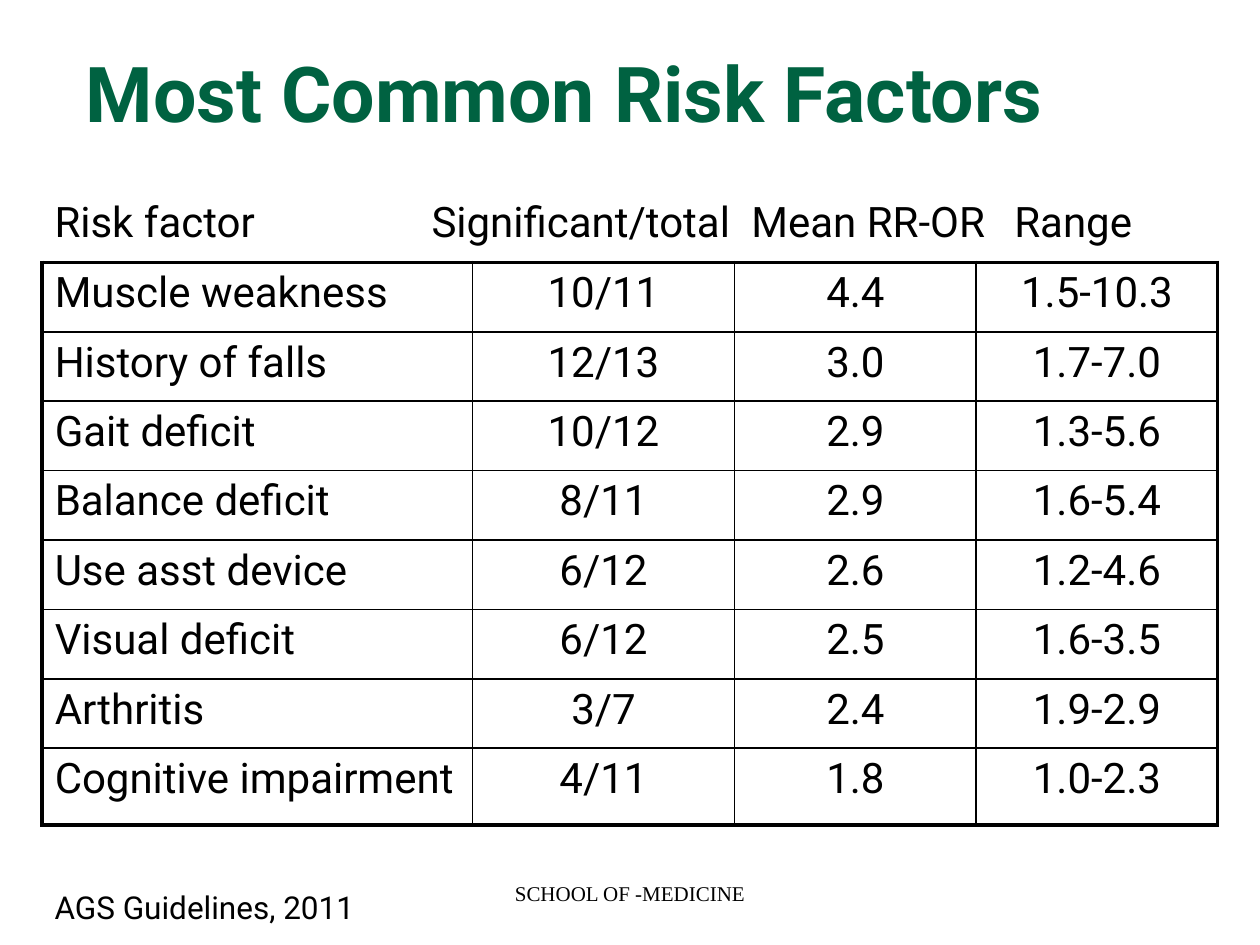
from dataclasses import dataclass

from lxml import etree
from pptx import Presentation
from pptx.dml.color import RGBColor
from pptx.enum.text import MSO_ANCHOR, PP_ALIGN
from pptx.oxml.ns import qn
from pptx.util import Cm, Pt

LEFT, CENTER = PP_ALIGN.LEFT, PP_ALIGN.CENTER
TOP, MIDDLE = MSO_ANCHOR.TOP, MSO_ANCHOR.MIDDLE


@dataclass(frozen=True)
class Theme:
    """Fonts, colours, type sizes and line widths of the slide."""
    sans: str = "Roboto"
    serif: str = "Times New Roman"
    green: str = "006241"
    black: str = "000000"
    title: int = 44
    body: int = 24
    source: int = 18
    footer: int = 12
    outer_line: float = 2.25
    inner_line: float = 1


THEME = Theme()
HEADINGS = ("Risk factor", "Significant/total", "Mean RR-OR", "Range")
HEADING_TABS = (7.6, 14.05, 19.35)
RISK_FACTORS = (
    ("Muscle weakness", "10/11", "4.4", "1.5-10.3"),
    ("History of falls", "12/13", "3.0", "1.7-7.0"),
    ("Gait deficit", "10/12", "2.9", "1.3-5.6"),
    ("Balance deficit", "8/11", "2.9", "1.6-5.4"),
    ("Use asst device", "6/12", "2.6", "1.2-4.6"),
    ("Visual deficit", "6/12", "2.5", "1.6-3.5"),
    ("Arthritis", "3/7", "2.4", "1.9-2.9"),
    ("Cognitive impairment", "4/11", "1.8", "1.0-2.3"),
)
COLUMN_SHARES = (0.366, 0.223, 0.2055, 0.2055)
ROW_HEIGHT = 1.4


def add_run(paragraph, text, size, font=THEME.sans, color=THEME.black, bold=False):
    """Append one formatted run to a paragraph."""
    run = paragraph.add_run()
    run.text = text
    run.font.name = font
    run.font.size = Pt(size)
    run.font.bold = bold
    run.font.color.rgb = RGBColor.from_string(color)


def add_text(slide, box, anchor=TOP, alignment=LEFT):
    """Add a wrapping text box and return its first paragraph."""
    frame = slide.shapes.add_textbox(*map(Cm, box)).text_frame
    frame.word_wrap = True
    frame.vertical_anchor = anchor
    paragraph = frame.paragraphs[0]
    paragraph.alignment = alignment
    return paragraph


def add_title(slide, box):
    """Place the slide title."""
    paragraph = add_text(slide, box, MIDDLE)
    paragraph.line_spacing = 0.9
    add_run(paragraph, "Most Common Risk Factors", THEME.title,
            color=THEME.green, bold=True)


def add_headings(slide, box):
    """Place the column headings on tab stops above the table."""
    paragraph = add_text(slide, box)
    properties = paragraph._p.get_or_add_pPr()
    tabs = etree.SubElement(properties, qn("a:tabLst"))
    for position in HEADING_TABS:
        etree.SubElement(tabs, qn("a:tab"), pos=str(Cm(position)), algn="l")
    add_run(paragraph, "\t".join(HEADINGS), THEME.body)


def set_borders(cell, outer_sides):
    """Draw the four cell borders, thicker on the outer sides."""
    properties = cell._tc.get_or_add_tcPr()
    for side in "LRTB":
        width = THEME.outer_line if side in outer_sides else THEME.inner_line
        line = etree.SubElement(properties, qn(f"a:ln{side}"), w=str(Pt(width)))
        fill = etree.SubElement(line, qn("a:solidFill"))
        etree.SubElement(fill, qn("a:srgbClr"), val=THEME.black)


def add_risk_table(slide, box):
    """Place the table of risk factors, the last row taking the remaining height."""
    row_count, column_count = len(RISK_FACTORS), len(HEADINGS)
    table = slide.shapes.add_table(row_count, column_count, *map(Cm, box)).table
    table.first_row = table.horz_banding = False
    width, height = box[2:]
    for column, share in zip(table.columns, COLUMN_SHARES):
        column.width = Cm(width * share)
    for row in table.rows:
        row.height = Cm(ROW_HEIGHT)
    table.rows[row_count - 1].height = Cm(height - ROW_HEIGHT * (row_count - 1))
    for row_index, values in enumerate(RISK_FACTORS):
        for column_index, value in enumerate(values):
            cell = table.cell(row_index, column_index)
            edges = {"L": column_index == 0, "R": column_index == column_count - 1,
                     "T": row_index == 0, "B": row_index == row_count - 1}
            set_borders(cell, [side for side, outer in edges.items() if outer])
            cell.fill.background()
            paragraph = cell.text_frame.paragraphs[0]
            paragraph.alignment = CENTER if column_index else LEFT
            add_run(paragraph, value, THEME.body)


def add_footer(slide, box):
    """Place the centred school name."""
    paragraph = add_text(slide, box, MIDDLE, CENTER)
    add_run(paragraph, "SCHOOL OF -MEDICINE", THEME.footer, THEME.serif)


def add_source(slide, box):
    """Place the source of the figures."""
    add_run(add_text(slide, box), "AGS Guidelines, 2011", THEME.source)


def main():
    """Build and save the presentation."""
    presentation = Presentation()
    presentation.slide_width, presentation.slide_height = Cm(25.4), Cm(19.05)
    slide = presentation.slides.add_slide(presentation.slide_layouts[6])
    add_title(slide, (1.48, 0.85, 19.9, 2.25))
    add_risk_table(slide, (0.85, 5.29, 23.7, 11.35))
    add_footer(slide, (8.68, 17.35, 8.04, 1.32))
    add_headings(slide, (0.85, 3.81, 23.92, 1.27))
    add_source(slide, (0.85, 17.78, 12.5, 1.02))
    presentation.save("out.pptx")


if __name__ == "__main__":
    main()
